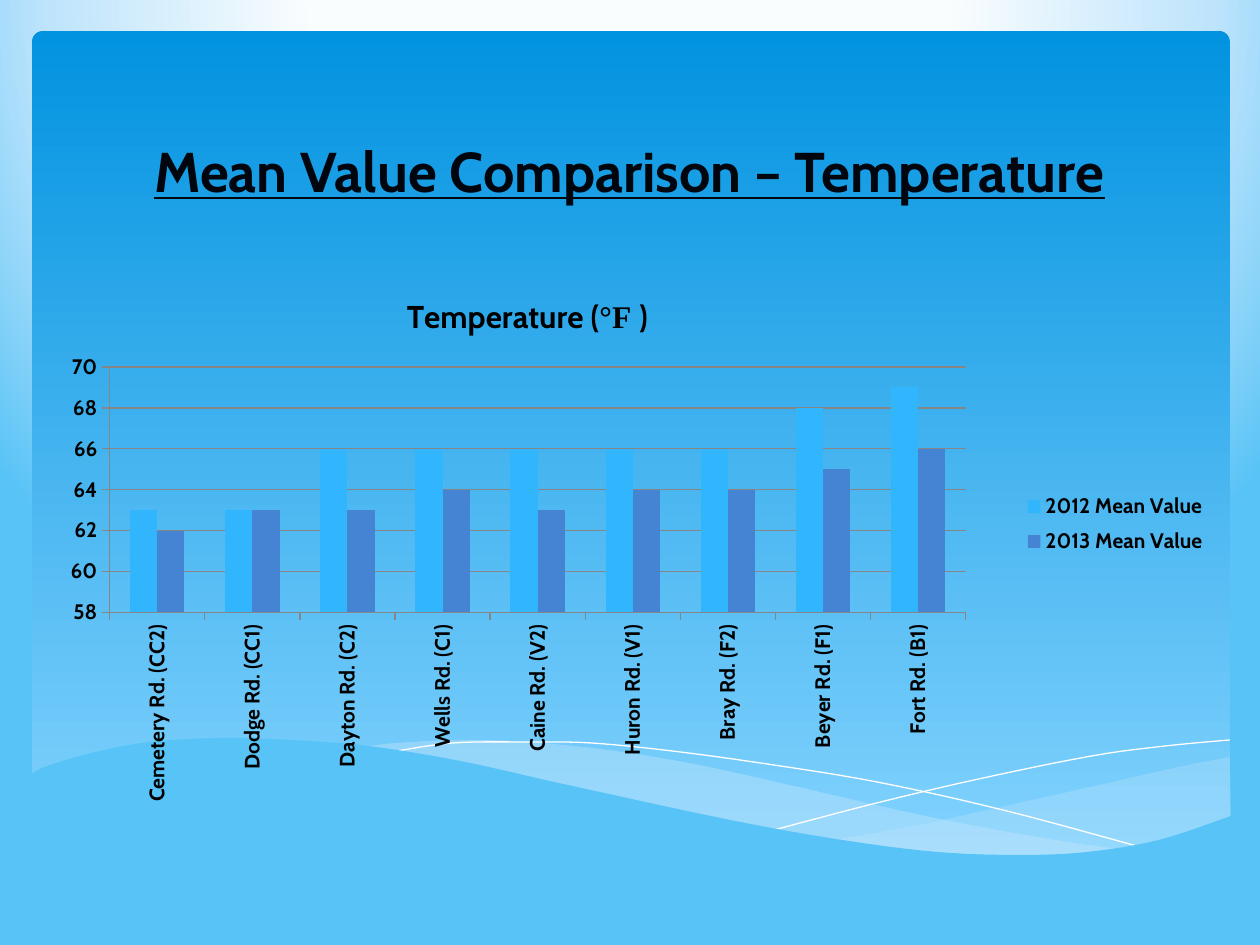
from lxml import etree
from pptx import Presentation
from pptx import util as u
from pptx.chart.data import CategoryChartData
from pptx.dml.color import RGBColor
from pptx.enum import chart as charts, shapes, text
from pptx.oxml import parse_xml
from pptx.oxml.ns import qn

FONT = "Cabin"
SYMBOL_FONT = "Times New Roman"
INK = RGBColor(0x01, 0x06, 0x0E)
BLACK = RGBColor(0x00, 0x00, 0x00)
WHITE = RGBColor(0xFF, 0xFF, 0xFF)
GREY = RGBColor(0x86, 0x86, 0x86)
PANEL_TOP = RGBColor(0x02, 0x93, 0xE0)
PANEL_BOTTOM = RGBColor(0x83, 0xD3, 0xFE)
GLOW = RGBColor(0xFA, 0xFD, 0xFE)
HAZE = RGBColor(0xBE, 0xE4, 0xFC)
SKY = RGBColor(0x58, 0xC3, 0xF6)
FOAM = RGBColor(0xC6, 0xE7, 0xFC)
BAR_2012 = RGBColor(0x31, 0xB6, 0xFD)
BAR_2013 = RGBColor(0x45, 0x84, 0xD3)

DRAWING = "http://schemas.openxmlformats.org/drawingml/2006/main"
CHART_NS = "http://schemas.openxmlformats.org/drawingml/2006/chart"
EMU_PER_PX = 914400 / 126

RIGHT_SWELL = (
    [(1230, 757), (1179, 767), (1086, 788), (983, 811), (920, 825), (834, 840)],
    [(834, 840), (890, 848), (955, 854), (1013, 857), (1077, 854), (1143, 845),
     (1189, 833), (1231, 818)],
)
MIDDLE_SWELL = (
    [(1126, 850), (1056, 840), (935, 818), (794, 786), (699, 765), (616, 751),
     (529, 742), (456, 740), (396, 743), (362, 747)],
    [(362, 747), (432, 757), (510, 772), (567, 786), (668, 809), (759, 828),
     (839, 842), (911, 852), (975, 856), (1032, 857), (1094, 854), (1126, 850)],
)
FRONT_WAVE = (
    [(1231, 816), (1159, 840), (1087, 852), (1019, 855), (937, 852), (842, 840),
     (730, 820), (563, 784), (460, 761), (368, 746), (290, 740), (223, 738),
     (150, 742), (96, 752), (50, 765), (29, 775)],
    [(29, 921), (1231, 921)],
)
FALLING_LINE = [(391, 752), (453, 743), (525, 742), (591, 743), (672, 751),
                (767, 764), (877, 782), (1003, 810), (1144, 848)]
RISING_LINE = [(774, 830), (877, 803), (979, 779), (1092, 756), (1166, 746), (1230, 740)]

ROADS = ["Cemetery Rd. (CC2)", "Dodge Rd. (CC1)", "Dayton Rd. (C2)", "Wells Rd. (C1)",
         "Caine Rd. (V2)", "Huron Rd. (V1)", "Bray Rd. (F2)", "Beyer Rd. (F1)",
         "Fort Rd. (B1)"]
MEANS = [
    ("2012 Mean Value", BAR_2012, [63, 63, 66, 66, 66, 66, 66, 68, 69]),
    ("2013 Mean Value", BAR_2013, [62, 63, 63, 64, 63, 64, 64, 65, 66]),
]


def px(length):
    return u.Emu(round(length * EMU_PER_PX))


def smooth(knots, steps=6):
    """Sample a Catmull-Rom curve that passes through every knot."""
    padded = [knots[0], *knots, knots[-1]]
    points = [knots[0]]
    for a, b, c, d in zip(padded, padded[1:], padded[2:], padded[3:]):
        for step in range(1, steps + 1):
            t = step / steps
            points.append(tuple(
                0.5 * (2 * q + (r - p) * t + (2 * p - 5 * q + 4 * r - s) * t ** 2
                       + (3 * q - p - 3 * r + s) * t ** 3)
                for p, q, r, s in zip(a, b, c, d)))
    return points


def set_font(font, size, color=BLACK, bold=True, name=FONT, underline=None):
    font.name, font.size, font.bold = name, u.Pt(size), bold
    font.color.rgb, font.underline = color, underline


def write(para, words, **style):
    span = para.add_run()
    span.text = words
    set_font(span.font, **style)


def set_layout(parent, index, x, y, w=None, h=None, inner=False):
    """Fix a chart part at fractions of the chart area."""
    for old in parent.findall(qn("c:layout")):
        parent.remove(old)
    values = {"layoutTarget": "inner" if inner else None, "xMode": "edge",
              "yMode": "edge", "x": x, "y": y, "w": w, "h": h}
    tags = "".join(f'<c:{tag} val="{value}"/>' for tag, value in values.items()
                   if value is not None)
    parent.insert(index, parse_xml(
        f'<c:layout xmlns:c="{CHART_NS}"><c:manualLayout>{tags}</c:manualLayout></c:layout>'))


class SlideBuilder:
    def __init__(self, deck):
        self.slide = deck.slides.add_slide(deck.slide_layouts[5])
        self.shapes = self.slide.shapes

    def radial_background(self, stops):
        self.slide.background.fill.solid()
        marks = "".join(f'<a:gs pos="{percent * 1000}"><a:srgbClr val="{color}"/></a:gs>'
                        for percent, color in stops)
        gradient = parse_xml(
            f'<a:gradFill xmlns:a="{DRAWING}" rotWithShape="1"><a:gsLst>{marks}</a:gsLst>'
            '<a:path path="circle"><a:fillToRect l="20000" t="-40000" r="20000" b="140000"/>'
            '</a:path></a:gradFill>')
        solid = self.slide.element.find(".//" + qn("p:bgPr")).find(qn("a:solidFill"))
        solid.getparent().replace(solid, gradient)

    def panel(self, x, y, w, h, top, bottom):
        box = self.shapes.add_shape(shapes.MSO_SHAPE.ROUNDED_RECTANGLE,
                                    px(x), px(y), px(w), px(h))
        box.adjustments[0] = 0.013
        box.shadow.inherit = False
        box.line.fill.background()
        box.fill.gradient()
        box.fill.gradient_angle = 270
        for stop, color in zip(box.fill.gradient_stops, (top, bottom)):
            stop.color.rgb = color

    def curve(self, points, closed):
        first, *rest = [(px(x), px(y)) for x, y in points]
        builder = self.shapes.build_freeform(*first)
        builder.add_line_segments(rest, close=closed)
        shape = builder.convert_to_shape()
        shape.shadow.inherit = False
        return shape

    def wave(self, edges, color, alpha=None):
        """Fill the area between two edges; alpha is opacity in percent."""
        crest, base = edges
        shape = self.curve(smooth(crest) + smooth(base), closed=True)
        shape.line.fill.background()
        shape.fill.solid()
        shape.fill.fore_color.rgb = color
        if alpha is not None:
            paint = shape.element.spPr.find(qn("a:solidFill"))[0]
            etree.SubElement(paint, qn("a:alpha"), val=str(alpha * 1000))

    def hairline(self, knots):
        shape = self.curve(smooth(knots), closed=False)
        shape.fill.background()
        shape.line.color.rgb = WHITE
        shape.line.width = u.Pt(0)

    def title(self, words, x, y, w, h):
        box = self.shapes.title
        box.left, box.top, box.width, box.height = px(x), px(y), px(w), px(h)
        self.shapes.element.append(box.element)
        frame = box.text_frame
        frame.word_wrap = True
        frame.auto_size = text.MSO_AUTO_SIZE.NONE
        frame.vertical_anchor = text.MSO_ANCHOR.BOTTOM
        para = frame.paragraphs[0]
        para.alignment = text.PP_ALIGN.CENTER
        write(para, words, size=32, color=INK, underline=True)

    def column_chart(self, x, y, w, h, categories, series):
        data = CategoryChartData()
        data.categories = categories
        for name, _, values in series:
            data.add_series(name, values)
        chart = self.shapes.add_chart(charts.XL_CHART_TYPE.COLUMN_CLUSTERED,
                                      px(x), px(y), px(w), px(h), data).chart
        set_font(chart.font, 10, bold=False)
        plot = chart.plots[0]
        plot.gap_width, plot.overlap, plot.vary_by_categories = 150, 0, False
        for bars, (_, color, _) in zip(plot.series, series):
            bars.format.fill.solid()
            bars.format.fill.fore_color.rgb = color

        values = chart.value_axis
        values.minimum_scale, values.maximum_scale, values.major_unit = 58, 70, 2
        values.has_major_gridlines = True
        for axis in (chart.category_axis, values):
            axis.major_tick_mark = charts.XL_TICK_MARK.OUTSIDE
            set_font(axis.tick_labels.font, 12)
        for part in (chart.category_axis, values, values.major_gridlines):
            part.format.line.color.rgb = GREY
            part.format.line.width = u.Pt(0.75)
        label_body = chart.category_axis._element.find(qn("c:txPr")).find(qn("a:bodyPr"))
        label_body.set("rot", "-5400000")
        label_body.set("vert", "horz")

        chart.has_legend = True
        chart.legend.position = charts.XL_LEGEND_POSITION.RIGHT
        chart.legend.include_in_layout = False
        set_font(chart.legend.font, 12)
        chart.has_title = True
        para = chart.chart_title.text_frame.paragraphs[0]
        for words, font in (("Temperature (", FONT), ("°F ", SYMBOL_FONT), (")", FONT)):
            write(para, words, size=18, name=font)

        set_layout(chart.chart_title._element, 1, 0.31, 0.07)
        set_layout(chart.legend._element, 1, 0.82, 0.41, 0.17, 0.14)
        set_layout(plot._element.getparent(), 0, 0.065, 0.203, 0.715, 0.433, inner=True)


def main():
    deck = Presentation()
    deck.slide_width, deck.slide_height = px(1260), px(945)
    page = SlideBuilder(deck)
    page.radial_background([(40, GLOW), (74, HAZE), (100, SKY)])
    page.panel(32, 31, 1198, 832, PANEL_TOP, PANEL_BOTTOM)
    page.wave(RIGHT_SWELL, FOAM, alpha=29)
    page.wave(MIDDLE_SWELL, FOAM, alpha=40)
    page.hairline(FALLING_LINE)
    page.hairline(RISING_LINE)
    page.wave(FRONT_WAVE, SKY)
    page.title("Mean Value Comparison – Temperature", 94, 116, 1071, 94)
    page.column_chart(32, 252, 1197, 567, ROADS, MEANS)
    deck.save("out.pptx")


if __name__ == "__main__":
    main()
